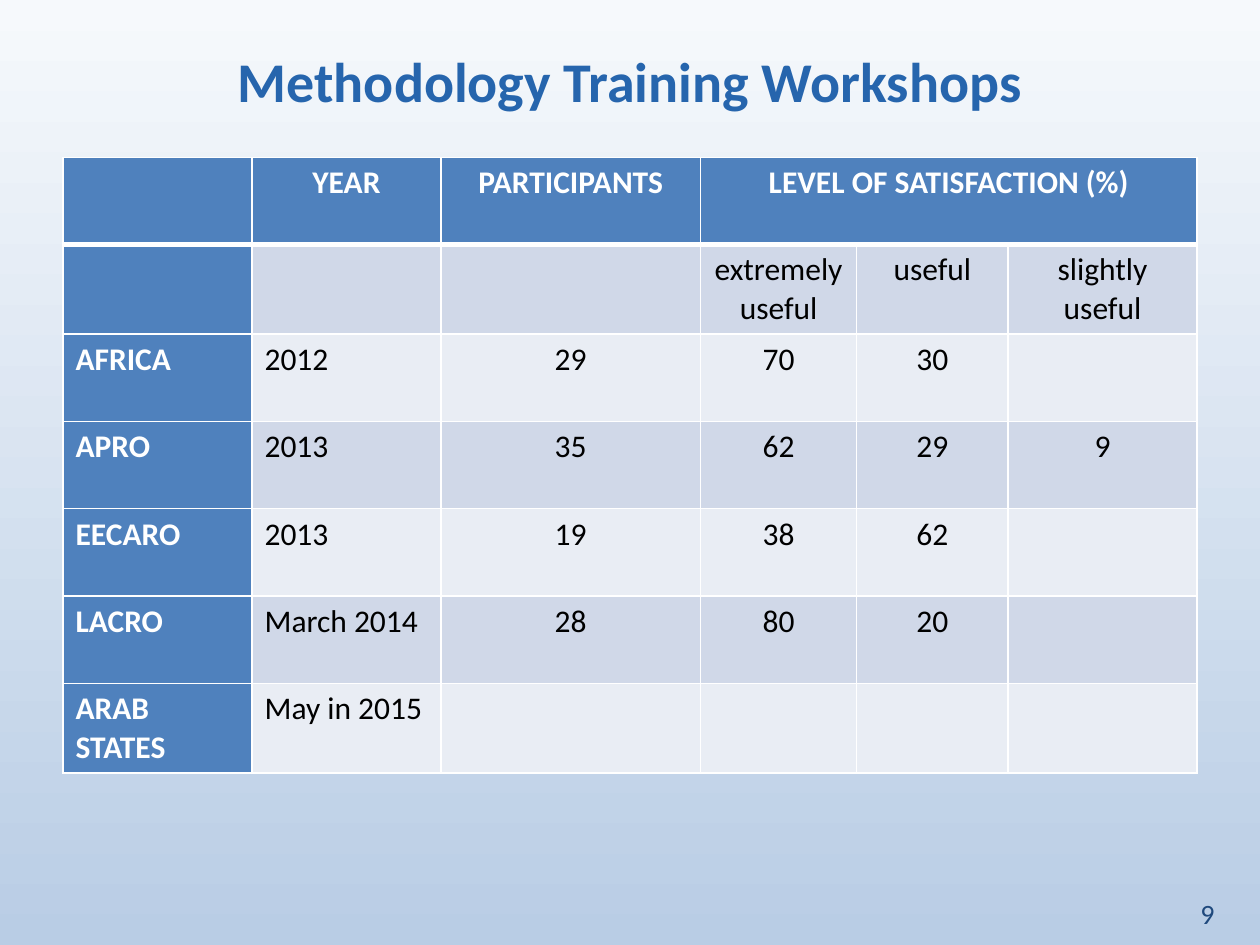
from lxml.etree import SubElement
from pptx import Presentation
from pptx.dml.color import RGBColor
from pptx.enum.text import MSO_ANCHOR, PP_ALIGN
from pptx.oxml.ns import qn
from pptx.util import Cm, Pt

WHITE = RGBColor(0xFF, 0xFF, 0xFF)
BLACK = RGBColor(0, 0, 0)
BLUE = RGBColor(0x4F, 0x81, 0xBD)
TITLE = RGBColor(0x26, 0x65, 0xAD)
NAVY = RGBColor(0x1F, 0x49, 0x7D)
DARK = RGBColor(0xD0, 0xD8, 0xE8)
LIGHT = RGBColor(0xE9, 0xED, 0xF4)
SKY = RGBColor(0xF6, 0xF9, 0xFC)
HAZE = RGBColor(0xB9, 0xCD, 0xE5)


def write(frame, text, size, color, bold=False, align=PP_ALIGN.LEFT):
    para = frame.paragraphs[0]
    para.alignment = align
    run = para.add_run()
    run.text = text
    run.font.name = "Calibri"
    run.font.size = Pt(size)
    run.font.bold = bold
    run.font.color.rgb = color


def edge(cell, side, width):
    line = SubElement(cell._tc.get_or_add_tcPr(), qn(f"a:ln{side}"), w=str(Pt(width)))
    fill = SubElement(line, qn("a:solidFill"))
    SubElement(fill, qn("a:srgbClr"), val=str(WHITE))


deck = Presentation()
deck.slide_width = Cm(25.4)
deck.slide_height = Cm(19.05)
slide = deck.slides.add_slide(deck.slide_layouts[5])

back = slide.background.fill
back.gradient()
back.gradient_angle = 270
for stop, color in zip(back.gradient_stops, (SKY, HAZE)):
    stop.color.rgb = color

title = slide.shapes.title
title.left, title.top = Cm(1.27), Cm(0.8)
title.width, title.height = Cm(22.86), Cm(1.62)
title.text_frame.vertical_anchor = MSO_ANCHOR.MIDDLE
write(title.text_frame, "Methodology Training Workshops", 32, TITLE, True, PP_ALIGN.CENTER)

rows = [
    ["", "YEAR", "PARTICIPANTS", "LEVEL OF SATISFACTION (%)", "", ""],
    ["", "", "", "extremely useful", "useful", "slightly useful"],
    ["AFRICA", "2012", "29", "70", "30", ""],
    ["APRO", "2013", "35", "62", "29", "9"],
    ["EECARO", "2013", "19", "38", "62", ""],
    ["LACRO", "March 2014", "28", "80", "20", ""],
    ["ARAB STATES", "May in 2015", "", "", "", ""],
]
widths = [3.81, 3.81, 5.23, 3.15, 3.05, 3.81]
high = 1.76
table = slide.shapes.add_table(
    len(rows), len(widths), Cm(1.27), Cm(3.17), Cm(sum(widths)), Cm(high * len(rows))
).table
table.first_col = True
for col, width in zip(table.columns, widths):
    col.width = Cm(width)
for r, row in enumerate(rows):
    table.rows[r].height = Cm(high)
    for c, text in enumerate(row):
        cell = table.cell(r, c)
        edge(cell, "L", 1)
        edge(cell, "R", 1)
        edge(cell, "T", 3 if r == 1 else 1)
        edge(cell, "B", 3 if r == 0 else 1)
        head = r == 0 or c == 0
        cell.fill.solid()
        cell.fill.fore_color.rgb = BLUE if head else DARK if r % 2 else LIGHT
        if text:
            align = PP_ALIGN.CENTER if r == 0 or c > 1 else PP_ALIGN.LEFT
            write(cell.text_frame, text, 18, WHITE if head else BLACK, head, align)
table.cell(0, 3).merge(table.cell(0, 5))

page = slide.shapes.add_textbox(Cm(23.95), Cm(17.86), Cm(1.24), Cm(1.09)).text_frame
page.word_wrap = True
page.vertical_anchor = MSO_ANCHOR.MIDDLE
write(page, "9", 16, NAVY)

deck.save("out.pptx")
